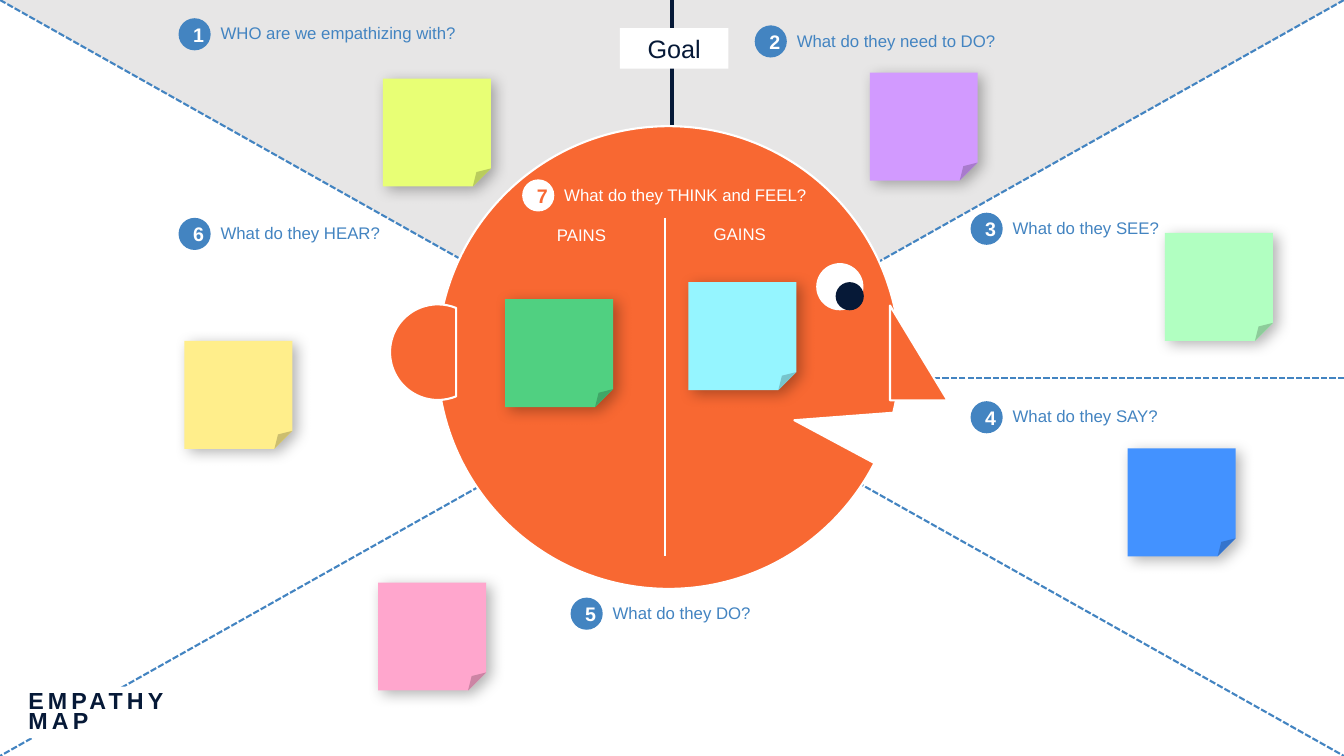
import pptx
import pptx.dml.color
import pptx.enum.dml
import pptx.enum.shapes
import pptx.enum.text
import pptx.oxml.ns
import pptx.util
import lxml.etree

Cm = pptx.util.Cm
Pt = pptx.util.Pt
KIND = pptx.enum.shapes.MSO_SHAPE
ALIGN = pptx.enum.text.PP_ALIGN
ANCHOR = pptx.enum.text.MSO_ANCHOR

WIDE, HIGH = 33.87, 19.05
BLUE, NAVY, ORANGE, WHITE = "4384C1", "061937", "F86832", "FFFFFF"
DISC = 0.81
NOTE = 2.72

LABELS = [
    ("1", "WHO are we empathizing with?", 4.5, 0.46, 6.68),
    ("2", "What do they need to DO?", 19.02, 0.64, 5.87),
    ("3", "What do they SEE?", 24.46, 5.36, 4.32),
    ("4", "What do they SAY?", 24.46, 10.11, 4.32),
    ("5", "What do they DO?", 14.38, 15.06, 4.09),
    ("6", "What do they HEAR?", 4.5, 5.49, 4.78),
]
NOTES = [
    (4.65, 8.59, "FFEE8B"),
    (9.65, 1.98, "E8FF75"),
    (17.35, 7.11, "95F5FF"),
    (21.92, 1.83, "D29AFF"),
    (12.73, 7.54, "50D081"),
    (28.42, 11.3, "4392FF"),
    (29.36, 5.87, "B1FFC1"),
    (9.53, 14.68, "FFA6CD"),
]


def paint(target, tone):
    if isinstance(target, pptx.dml.fill.FillFormat):
        target.solid()
        target = target.fore_color
    target.rgb = pptx.dml.color.RGBColor.from_string(tone)


def finish(shape, fill, edge=None):
    shape.shadow.inherit = False
    paint(shape.fill, fill)
    if edge:
        paint(shape.line.fill, edge)
        shape.line.width = Pt(1.5)
    else:
        shape.line.fill.background()
    return shape


def add_form(shapes, kind, left, top, width, height, fill, edge=None):
    box = [Cm(side) for side in (left, top, width, height)]
    return finish(shapes.add_shape(kind, *box), fill, edge)


def write(shape, text, size, tone, align=ALIGN.LEFT, bold=False):
    frame = shape.text_frame
    frame.word_wrap = True
    frame.text = text
    line = frame.paragraphs[0]
    line.alignment = align
    font = line.runs[0].font
    font.name, font.size, font.bold = "Arial", Pt(size), bold
    paint(font.color, tone)


def add_text(shapes, text, left, top, width, tone, align=ALIGN.LEFT):
    box = shapes.add_textbox(Cm(left), Cm(top), Cm(width), Cm(0.76))
    write(box, text, 12, tone, align)


def add_line(shapes, start, end, tone, weight, dashed=False):
    ends = [Cm(side) for side in (*start, *end)]
    line = shapes.add_connector(pptx.enum.shapes.MSO_CONNECTOR.STRAIGHT, *ends)
    paint(line.line.fill, tone)
    line.line.width = Pt(weight)
    if dashed:
        line.line.dash_style = pptx.enum.dml.MSO_LINE.SQUARE_DOT
    props = line.element.spPr
    lxml.etree.SubElement(props, pptx.oxml.ns.qn("a:effectLst"))


def add_label(shapes, digit, text, left, top, width, tone=BLUE, ink=WHITE):
    add_text(shapes, text, left + DISC, top, width, tone)
    disc = add_form(shapes, KIND.OVAL, left, top, DISC, DISC, tone)
    write(disc, digit, 14, ink, ALIGN.CENTER, True)


def add_note(shapes, left, top, tone):
    qn = pptx.oxml.ns.qn
    note = add_form(shapes, KIND.FOLDED_CORNER, left, top, NOTE, NOTE, tone)
    effects = note.element.spPr.find(qn("a:effectLst"))
    shade = lxml.etree.SubElement(
        effects, qn("a:outerShdw"), blurRad=str(Pt(10.5)), dist=str(Pt(4)),
        dir=str(37 * 60000), algn="tl", rotWithShape="0")
    tone = lxml.etree.SubElement(shade, qn("a:srgbClr"), val="000000")
    lxml.etree.SubElement(tone, qn("a:alpha"), val="29000")


def add_head(shapes):
    head = shapes.add_group_shape().shapes
    add_form(head, KIND.OVAL, 11.02, 3.18, 11.66, 11.66, ORANGE, WHITE)
    ear = add_form(head, KIND.CHORD, 9.83, 7.67, 2.41, 2.41, ORANGE, WHITE)
    ear.adjustments[0] = 40.56
    ear.adjustments[1] = 175.53
    add_form(head, KIND.RIGHT_TRIANGLE, 22.43, 7.7, 1.45, 2.39, ORANGE, WHITE)
    add_form(head, KIND.OVAL, 20.57, 6.63, 1.19, 1.19, WHITE)
    add_form(head, KIND.OVAL, 21.06, 7.11, 0.71, 0.71, NAVY)
    mouth = head.build_freeform(Cm(22.15), Cm(11.73))
    mouth.add_line_segments(
        [(Cm(20.02), Cm(10.59)), (Cm(22.66), Cm(10.39))], close=True)
    finish(mouth.convert_to_shape(), WHITE, WHITE)


def set_title(shapes):
    title = shapes.title
    title.left, title.top = Cm(0.46), Cm(17.3)
    title.width, title.height = Cm(4.32), Cm(1.3)
    paint(title.fill, WHITE)
    write(title, "EMPATHY MAP", 16.6, NAVY, bold=True)
    frame = title.text_frame
    frame.auto_size = pptx.enum.text.MSO_AUTO_SIZE.NONE
    frame.vertical_anchor = ANCHOR.BOTTOM
    line = frame.paragraphs[0]
    line.line_spacing = 0.7
    line.space_before = Pt(0)
    line.runs[0].font._element.set("spc", "300")
    shapes.element.append(title.element)


def main():
    deck = pptx.Presentation()
    deck.slide_width, deck.slide_height = Cm(WIDE), Cm(HIGH)
    slide = deck.slides.add_slide(deck.slide_layouts[5])
    paint(slide.background.fill, WHITE)
    shapes = slide.shapes

    roof = add_form(shapes, KIND.ISOSCELES_TRIANGLE, 0, 0, WIDE, HIGH / 2, "E7E6E6")
    roof.rotation = 180
    add_line(shapes, (WIDE / 2, 0), (WIDE / 2, 4.5), NAVY, 3)
    for start, end in [
        ((WIDE, HIGH / 2), (22.48, HIGH / 2)),
        ((WIDE, 0), (0, HIGH)),
        ((0, 0), (WIDE, HIGH)),
    ]:
        add_line(shapes, start, end, BLUE, 1.5, True)

    add_head(shapes)
    goal = add_form(shapes, KIND.RECTANGLE, 15.62, 0.71, 2.74, 1.02, WHITE)
    write(goal, "Goal", 18, NAVY, ALIGN.CENTER)

    for label in LABELS:
        add_label(shapes, *label)
    add_label(shapes, "7", "What do they THINK and FEEL?", 13.16, 4.52, 6.86,
              WHITE, ORANGE)
    add_line(shapes, (16.76, 5.49), (16.76, 14.02), WHITE, 1)
    add_text(shapes, "PAINS", 13.64, 5.54, 2.03, WHITE, ALIGN.CENTER)
    add_text(shapes, "GAINS", 17.63, 5.51, 2.03, WHITE, ALIGN.CENTER)

    set_title(shapes)
    for note in NOTES:
        add_note(shapes, *note)
    deck.save("out.pptx")


if __name__ == "__main__":
    main()
